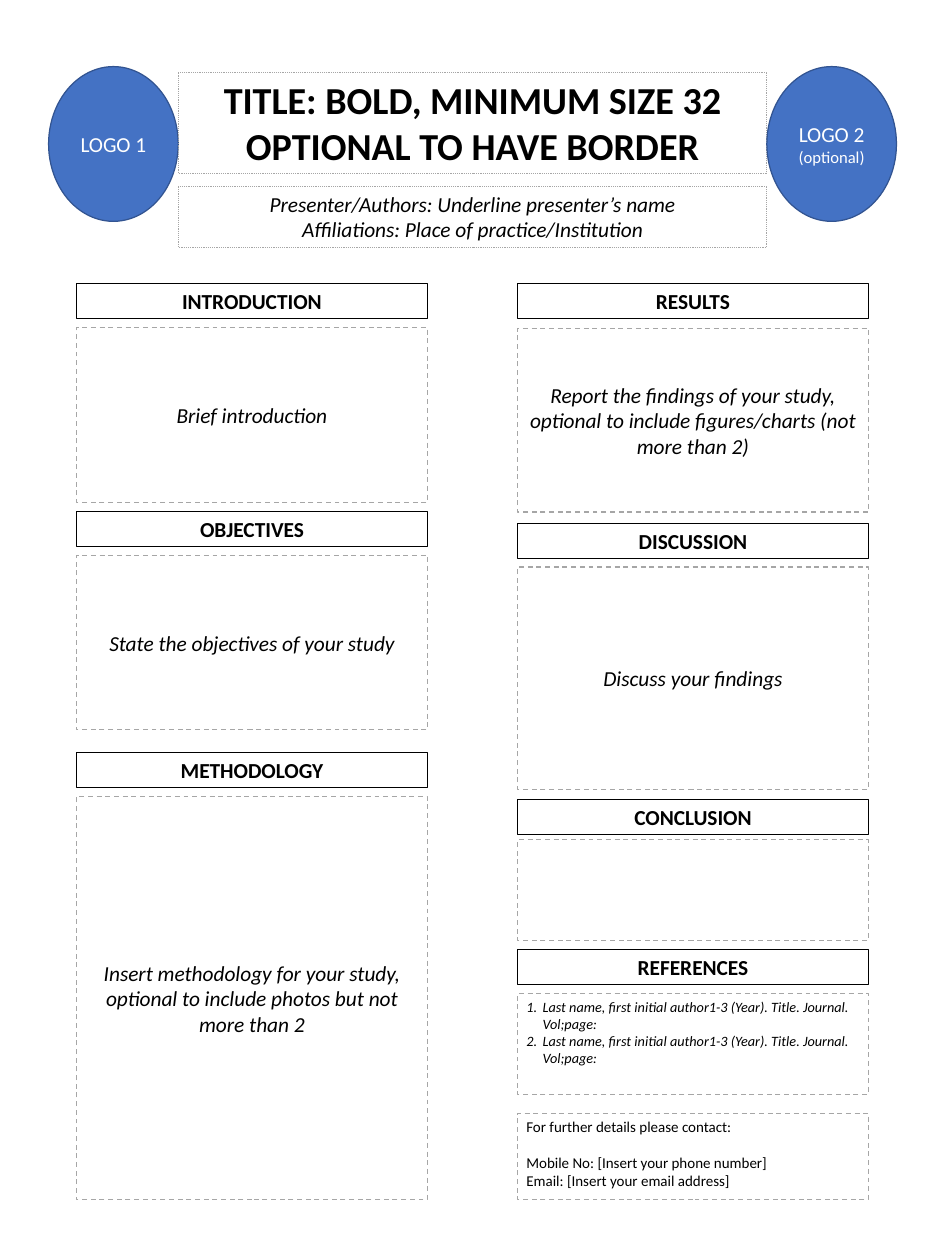
"""Build a portrait research poster template with two columns of sections."""
from dataclasses import dataclass

from lxml import etree
from pptx import Presentation
from pptx.dml.color import RGBColor
from pptx.enum.dml import MSO_LINE
from pptx.enum.shapes import MSO_SHAPE
from pptx.enum.text import MSO_ANCHOR, MSO_AUTO_SIZE, PP_ALIGN
from pptx.oxml.ns import qn
from pptx.util import Pt

FONT = "Calibri"
BLACK, WHITE, GREY, BLUE, NAVY = "000000", "FFFFFF", "A6A6A6", "4472C4", "325491"
BODY_SIZE = 17.1
LEFT, RIGHT, COL_W, HEAD_H = 61.2, 414, 280.8, 28.1
BANNER_X, BANNER_W = 142.6, 470.9
LOGO_Y, LOGO_W, LOGO_H = 53.3, 103.7, 123.8


@dataclass
class Box:
    x: float
    y: float
    w: float
    h: float
    text: str = ""
    size: float = BODY_SIZE
    color: str = BLACK
    bold: bool = False
    italic: bool = False
    kind: MSO_SHAPE = MSO_SHAPE.RECTANGLE
    fill: str | None = None
    line: str = BLACK
    weight: float = 0.75
    dash: MSO_LINE | None = None
    align: PP_ALIGN = PP_ALIGN.CENTER
    anchor: MSO_ANCHOR = MSO_ANCHOR.MIDDLE
    grow: bool = False


@dataclass
class Section:
    x: float
    head: str
    head_y: float
    body_y: float
    body_h: float
    body: str = ""


SECTIONS = [
    Section(LEFT, "INTRODUCTION", 226.8, 262.1, 139.7, "Brief introduction"),
    Section(LEFT, "OBJECTIVES", 409, 444.2, 139.7, "State the objectives of your study"),
    Section(LEFT, "METHODOLOGY", 601.9, 637.2, 322.6,
            "Insert methodology for your study, optional to include photos but not more than 2"),
    Section(RIGHT, "RESULTS", 226.8, 262.8, 146.9,
            "Report the findings of your study, optional to include figures/charts (not more than 2)"),
    Section(RIGHT, "DISCUSSION", 419, 453.6, 177.8, "Discuss your findings"),
    Section(RIGHT, "CONCLUSION", 639.4, 671.8, 80.6),
]
REFERENCE = "Last name, first initial author1-3 (Year). Title. Journal. Vol;page:"
CONTACT = ("For further details please contact:\n"
           "Mobile No: [Insert your phone number]\n"
           "Email: [Insert your email address]")


def rgb(value: str) -> RGBColor:
    return RGBColor.from_string(value)


def style_run(r, size: float, color: str, bold: bool = False, italic: bool = False) -> None:
    r.font.name = FONT
    r.font.size = Pt(size)
    r.font.color.rgb = rgb(color)
    r.font.bold = bold
    r.font.italic = italic


def draw_box(s, box: Box):
    sp = s.shapes.add_shape(box.kind, Pt(box.x), Pt(box.y), Pt(box.w), Pt(box.h))
    sp.shadow.inherit = False
    if box.fill:
        sp.fill.solid()
        sp.fill.fore_color.rgb = rgb(box.fill)
    else:
        sp.fill.background()
    sp.line.color.rgb = rgb(box.line)
    sp.line.width = Pt(box.weight)
    if box.dash:
        sp.line.dash_style = box.dash
    tf = sp.text_frame
    tf.word_wrap = True
    tf.vertical_anchor = box.anchor
    if box.grow:
        tf.auto_size = MSO_AUTO_SIZE.SHAPE_TO_FIT_TEXT
    if box.text:
        tf.text = box.text
    for p in tf.paragraphs:
        p.alignment = box.align
        for r in p.runs:
            style_run(r, box.size, box.color, box.bold, box.italic)
    return sp


def draw_logo(s, x: float, text: str):
    return draw_box(s, Box(x, LOGO_Y, LOGO_W, LOGO_H, text, color=WHITE,
                           kind=MSO_SHAPE.OVAL, fill=BLUE, line=NAVY, weight=1))


def draw_banner(s, y: float, h: float, text: str, size: float, bold: bool, italic: bool) -> None:
    draw_box(s, Box(BANNER_X, y, BANNER_W, h, text, size, bold=bold, italic=italic, line=GREY,
                    dash=MSO_LINE.ROUND_DOT, anchor=MSO_ANCHOR.TOP, grow=True))


def draw_heading(s, x: float, y: float, text: str) -> None:
    draw_box(s, Box(x, y, COL_W, HEAD_H, text, bold=True, anchor=MSO_ANCHOR.TOP, grow=True))


def draw_body(s, x: float, y: float, h: float, text: str, **style):
    return draw_box(s, Box(x, y, COL_W, h, text, line=GREY, weight=1, dash=MSO_LINE.DASH, **style))


def number_paragraph(p, indent: float) -> None:
    pPr = p._p.get_or_add_pPr()
    pPr.set("marL", str(int(Pt(indent))))
    pPr.set("indent", str(-int(Pt(indent))))
    etree.SubElement(pPr, qn("a:buFont"), typeface="+mj-lt")
    etree.SubElement(pPr, qn("a:buAutoNum"), type="arabicPeriod")


def main() -> None:
    prs = Presentation()
    prs.slide_width, prs.slide_height = Pt(756), Pt(1008)
    s = prs.slides.add_slide(prs.slide_layouts[6])

    draw_logo(s, BANNER_X - LOGO_W, "LOGO 1")
    draw_banner(s, 57.6, 81.4, "TITLE: BOLD, MINIMUM SIZE 32\nOPTIONAL TO HAVE BORDER",
                30.5, True, False)
    draw_banner(s, 149, 49, "Presenter/Authors: Underline presenter’s name\n"
                "Affiliations: Place of practice/Institution", BODY_SIZE, False, True)
    logo = draw_logo(s, BANNER_X + BANNER_W, "LOGO 2 ")
    r = logo.text_frame.paragraphs[0].add_run()
    r.text = "(optional)"
    style_run(r, 13.3, WHITE)

    for sec in SECTIONS:
        draw_heading(s, sec.x, sec.head_y, sec.head)
        draw_body(s, sec.x, sec.body_y, sec.body_h, sec.body, italic=True)

    top_left = {"align": PP_ALIGN.LEFT, "anchor": MSO_ANCHOR.TOP}
    draw_heading(s, RIGHT, 759.6, "REFERENCES")
    refs = draw_body(s, RIGHT, 794.9, 80.6, "\n".join([REFERENCE] * 2),
                     size=11.4, italic=True, **top_left)
    for p in refs.text_frame.paragraphs:
        number_paragraph(p, 13)
    contact = draw_body(s, RIGHT, 890.6, 69.1, CONTACT, size=12, **top_left)
    contact.text_frame.paragraphs[1].space_before = Pt(14.6)

    prs.save("out.pptx")


if __name__ == "__main__":
    main()
